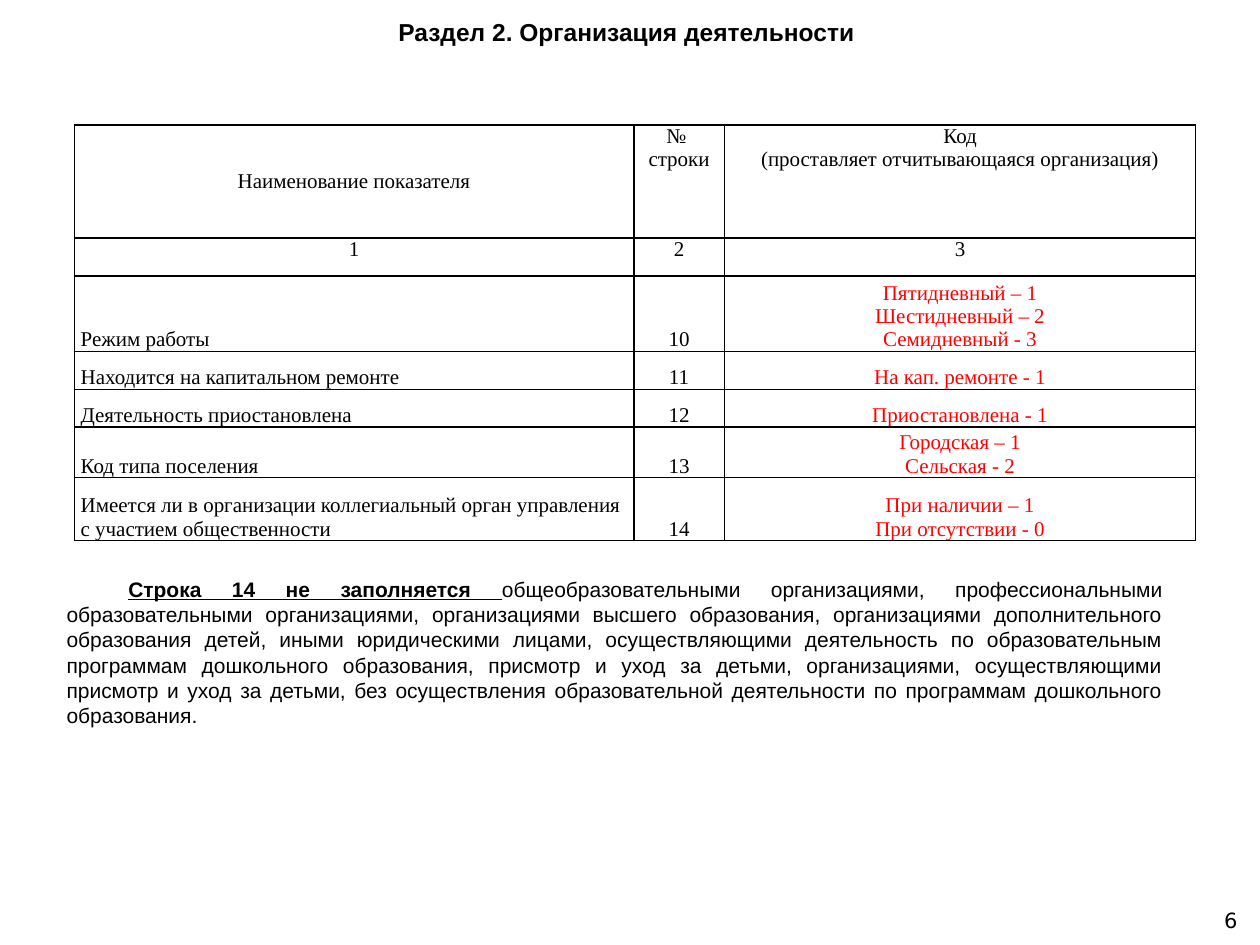
from dataclasses import dataclass

from lxml import etree
from pptx import Presentation
from pptx import util as u
from pptx.dml.color import RGBColor
from pptx.enum import text
from pptx.oxml.ns import qn

COLORS = {"ink": "000000", "code": "FF0000"}
TABLE_FONT = "Times New Roman"
CENTER, LEFT = text.PP_ALIGN.CENTER, text.PP_ALIGN.LEFT
TOP, MIDDLE, BOTTOM = (text.MSO_ANCHOR.TOP, text.MSO_ANCHOR.MIDDLE,
                       text.MSO_ANCHOR.BOTTOM)


@dataclass
class Row:
    height: float
    name: str
    number: str
    code: str
    header: bool = False


ROWS = [
    Row(0.9, "Наименование показателя", "№ \vстроки",
        "Код\v(проставляет отчитывающаяся организация)", True),
    Row(0.3, "1", "2", "3", True),
    Row(0.3, "Режим работы", "10",
        "Пятидневный – 1\nШестидневный – 2\nСемидневный - 3"),
    Row(0.3, "Находится на капитальном ремонте", "11", "На кап. ремонте - 1"),
    Row(0.3, "Деятельность приостановлена", "12", "Приостановлена - 1"),
    Row(0.3, "Код типа поселения", "13", "Городская – 1\nСельская - 2"),
    Row(0.5, "Имеется ли в организации коллегиальный орган управления "
        "с участием общественности", "14",
        "При наличии – 1\nПри отсутствии - 0"),
]
COL_WIDTHS = [4.44, 0.72, 3.74]

NOTE_LEAD = "Строка 14 не заполняется "
NOTE = (
    "общеобразовательными организациями, профессиональными образовательными "
    "организациями, организациями высшего образования, организациями "
    "дополнительного образования детей, иными юридическими лицами, "
    "осуществляющими деятельность по образовательным программам дошкольного "
    "образования, присмотр и уход за детьми, организациями, осуществляющими "
    "присмотр и уход за детьми, без осуществления образовательной "
    "деятельности по программам дошкольного образования."
)


def style_run(r, font: str, size: float, color: str = "ink",
              bold: bool = False, underline: bool = False) -> None:
    r.font.name = font
    r.font.size = u.Pt(size)
    r.font.bold = bold
    r.font.underline = underline
    r.font.color.rgb = RGBColor.from_string(COLORS[color])


def add_text(s, box: tuple, words: str, align, font: str, size: float,
             bold: bool = False, underline: bool = False, wrap: bool = True,
             grow: bool = False):
    sp = s.shapes.add_textbox(*map(u.Inches, box))
    tf = sp.text_frame
    tf.word_wrap = wrap
    tf.vertical_anchor = MIDDLE
    if grow:
        tf.auto_size = text.MSO_AUTO_SIZE.SHAPE_TO_FIT_TEXT
    tf.text = words
    p = tf.paragraphs[0]
    p.alignment = align
    style_run(p.runs[0], font, size, bold=bold, underline=underline)
    return p


def set_borders(cell, width: float = 1) -> None:
    tc_pr = cell._tc.get_or_add_tcPr()
    for i, side in enumerate(("lnL", "lnR", "lnT", "lnB")):
        ln = etree.Element(qn(f"a:{side}"), w=str(u.Pt(width)))
        fill = etree.SubElement(ln, qn("a:solidFill"))
        etree.SubElement(fill, qn("a:srgbClr"), val=COLORS["ink"])
        tc_pr.insert(i, ln)


def fill_cell(cell, words: str, align, anchor, color: str) -> None:
    cell.fill.background()
    set_borders(cell)
    cell.margin_left = cell.margin_right = u.Inches(0.05)
    cell.margin_top = cell.margin_bottom = 0
    cell.vertical_anchor = anchor
    cell.text_frame.text = words
    for p in cell.text_frame.paragraphs:
        p.alignment = align
        for r in p.runs:
            style_run(r, TABLE_FONT, 12, color)


def add_indicator_table(s) -> None:
    height = sum(row.height for row in ROWS)
    table = s.shapes.add_table(
        len(ROWS), len(COL_WIDTHS), u.Inches(0.59), u.Inches(0.99),
        u.Inches(sum(COL_WIDTHS)), u.Inches(height)).table
    table.first_row = table.horz_banding = False
    for col, width in zip(table.columns, COL_WIDTHS):
        col.width = u.Inches(width)
    for i, row in enumerate(ROWS):
        table.rows[i].height = u.Inches(row.height)
        for j, words in enumerate((row.name, row.number, row.code)):
            anchor = TOP if row.header else BOTTOM
            if i == 0 and j == 0:
                anchor = MIDDLE
            align = LEFT if j == 0 and not row.header else CENTER
            color = "code" if j == 2 and not row.header else "ink"
            fill_cell(table.cell(i, j), words, align, anchor, color)


def main() -> None:
    prs = Presentation()
    prs.slide_width, prs.slide_height = u.Inches(10), u.Inches(7.5)
    s = prs.slides.add_slide(prs.slide_layouts[6])

    # Page number
    add_text(s, (7.59, 7.1, 2.33, 0.4), "6", text.PP_ALIGN.RIGHT,
             "DejaVu Sans", 12)

    # Table of indicators
    add_indicator_table(s)

    # Heading
    add_text(s, (3.05, 0.08, 3.9, 0.34), "Раздел 2. Организация деятельности ",
             CENTER, "Arial", 14, bold=True, wrap=False, grow=True)

    # Note on row 14
    p = add_text(s, (0.43, 4.52, 8.9, 1.31), NOTE_LEAD, text.PP_ALIGN.JUSTIFY,
                 "Arial", 12, bold=True, underline=True, grow=True)
    p._p.get_or_add_pPr().set("indent", str(u.Inches(0.49)))
    r = p.add_run()
    r.text = NOTE
    style_run(r, "Arial", 12)

    prs.save("out.pptx")


if __name__ == "__main__":
    main()
